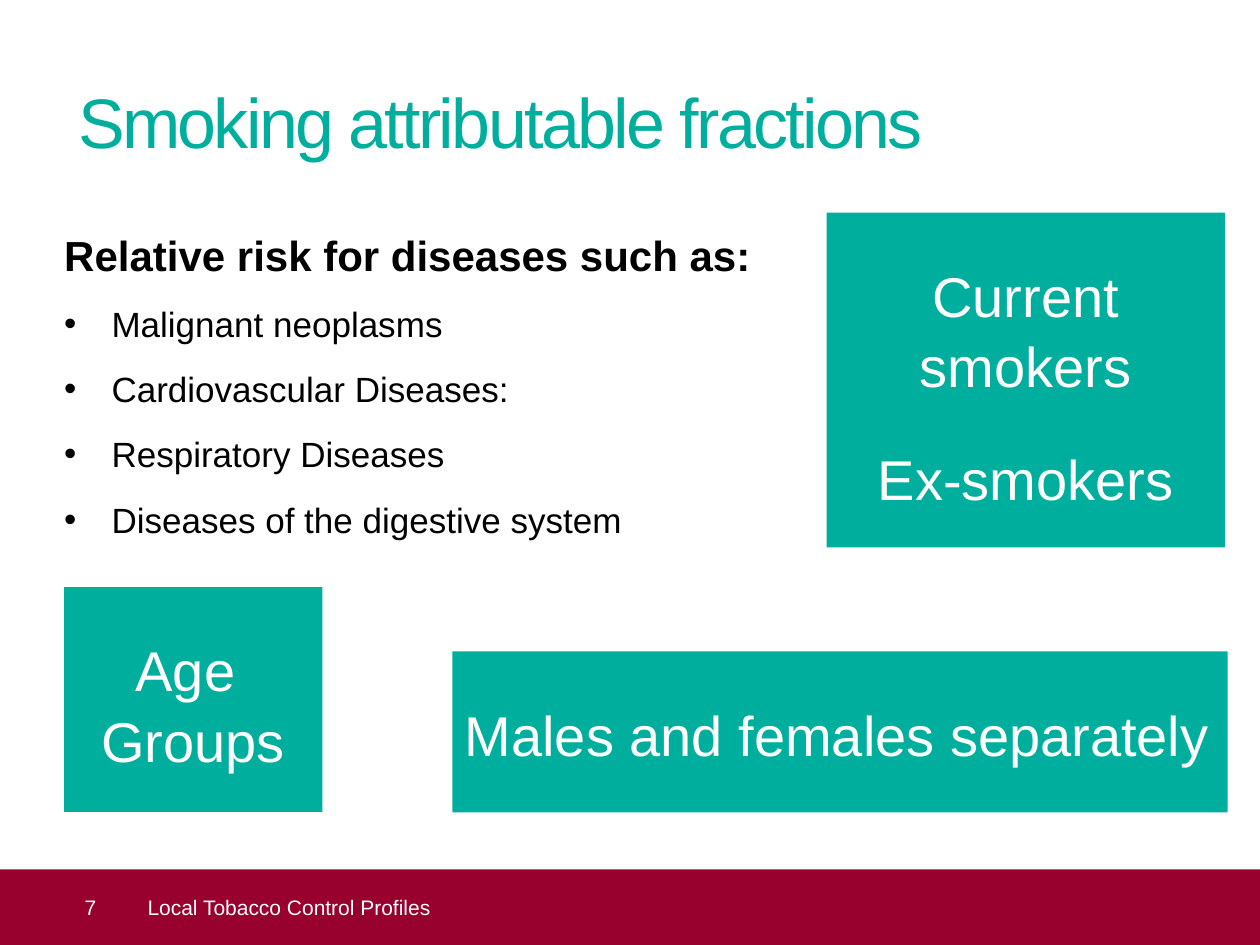
from dataclasses import dataclass

from lxml import etree
from pptx import Presentation
from pptx.dml.color import RGBColor
from pptx.enum.shapes import MSO_SHAPE
from pptx.enum.text import MSO_ANCHOR, MSO_AUTO_SIZE, PP_ALIGN
from pptx.oxml.ns import qn
from pptx.util import Pt

LEFT = PP_ALIGN.LEFT
CENTER = PP_ALIGN.CENTER
TOP = MSO_ANCHOR.TOP
MIDDLE = MSO_ANCHOR.MIDDLE
FIXED = MSO_AUTO_SIZE.NONE
RECTANGLE = MSO_SHAPE.RECTANGLE


@dataclass(frozen=True)
class Theme:
    font: str = "Arial"
    teal: RGBColor = RGBColor(0x00, 0xAE, 0x9E)
    crimson: RGBColor = RGBColor(0x98, 0x00, 0x2E)
    white: RGBColor = RGBColor(0xFF, 0xFF, 0xFF)
    black: RGBColor = RGBColor(0x00, 0x00, 0x00)
    title_size: int = 40
    panel_size: int = 32
    heading_size: int = 24
    list_size: int = 20
    footer_size: int = 12
    line_spacing: float = 1.05


def write(para, text, theme, size, color, bold=False, align=LEFT,
          before=0, tracking=0, spacing=1.0):
    para.alignment = align
    para.space_before = Pt(before)
    para.line_spacing = spacing
    span = para.add_run()
    span.text = text
    span.font.name = theme.font
    span.font.size = Pt(size)
    span.font.bold = bold
    span.font.color.rgb = color
    if tracking:
        span._r.get_or_add_rPr().set("spc", str(int(tracking * 100)))


def hang(para, indent, bullet=None):
    properties = para._p.get_or_add_pPr()
    properties.set("marL", str(Pt(indent)))
    properties.set("indent", str(-Pt(indent)))
    if bullet:
        etree.SubElement(properties, qn("a:buChar")).set("char", bullet)
    else:
        etree.SubElement(properties, qn("a:buNone"))


class SlideBuilder:
    def __init__(self, deck, theme):
        self.theme = theme
        self.page = deck.slides.add_slide(deck.slide_layouts[1])

    def frame(self, box, insets=(0, 0, 0, 0), anchor=MIDDLE, wrap=True):
        frame = box.text_frame
        frame.auto_size = FIXED
        frame.word_wrap = wrap
        frame.vertical_anchor = anchor
        (frame.margin_left, frame.margin_top,
         frame.margin_right, frame.margin_bottom) = map(Pt, insets)
        return frame

    def place(self, box, area):
        box.left, box.top, box.width, box.height = map(Pt, area)
        return box

    def title(self, area, text):
        box = self.place(self.page.shapes.title, area)
        write(self.frame(box).paragraphs[0], text, self.theme,
              self.theme.title_size, self.theme.teal, tracking=-1.5)

    def body(self, area, heading, items):
        theme = self.theme
        frame = self.frame(self.place(self.page.placeholders[1], area), anchor=TOP)
        para = frame.paragraphs[0]
        write(para, heading, theme, theme.heading_size, theme.black,
              bold=True, before=12, spacing=theme.line_spacing)
        hang(para, 27)
        for item in items:
            para = frame.add_paragraph()
            write(para, item, theme, theme.list_size, theme.black,
                  before=12, spacing=theme.line_spacing)
            hang(para, 27, "•")

    def rectangle(self, area, color):
        box = self.page.shapes.add_shape(RECTANGLE, *map(Pt, area))
        box.shadow.inherit = False
        box.fill.solid()
        box.fill.fore_color.rgb = color
        box.line.fill.background()
        return box

    def panel(self, area, lines, align=CENTER, gap=0, wrap=True):
        theme = self.theme
        frame = self.frame(self.rectangle(area, theme.teal),
                           (7.2, 26, 7.2, 3.6), TOP, wrap)
        for index, line in enumerate(lines):
            para = frame.add_paragraph() if index else frame.paragraphs[0]
            write(para, line, theme, theme.panel_size, theme.white, align=align,
                  before=gap if index else 0, spacing=theme.line_spacing)

    def footer(self, area, number, text):
        theme = self.theme
        left, top, width, height = area
        bar = self.rectangle(area, theme.crimson)
        label = self.page.shapes.add_textbox(
            Pt(left + 70.6), Pt(top), Pt(width - 85), Pt(height))
        for box, inset, words in ((bar, 48.4, number), (label, 13.7, text)):
            frame = self.frame(box, (inset, 0, 0, 0))
            write(frame.paragraphs[0], words, theme, theme.footer_size, theme.white)


def main():
    deck = Presentation()
    deck.slide_width, deck.slide_height = Pt(720), Pt(540)
    slide = SlideBuilder(deck, Theme())
    slide.title((44.6, 43.2, 632, 51), "Smoking attributable fractions")
    slide.body((36.7, 129.6, 632, 175.7), "Relative risk for diseases such as:", [
        "Malignant neoplasms",
        "Cardiovascular Diseases:",
        "Respiratory Diseases",
        "Diseases of the digestive system",
    ])
    slide.footer((0, 496.8, 720, 43.2), "7", "Local Tobacco Control Profiles")
    slide.panel((472.3, 121.5, 227.7, 191.3), ["Current smokers", "Ex-smokers"], gap=24)
    slide.panel((258.5, 372.2, 443, 92), ["Males and females separately"],
                align=LEFT, wrap=False)
    slide.panel((36.7, 335.5, 147.5, 128.5), ["Age ", "Groups"])
    deck.save("out.pptx")


if __name__ == "__main__":
    main()
